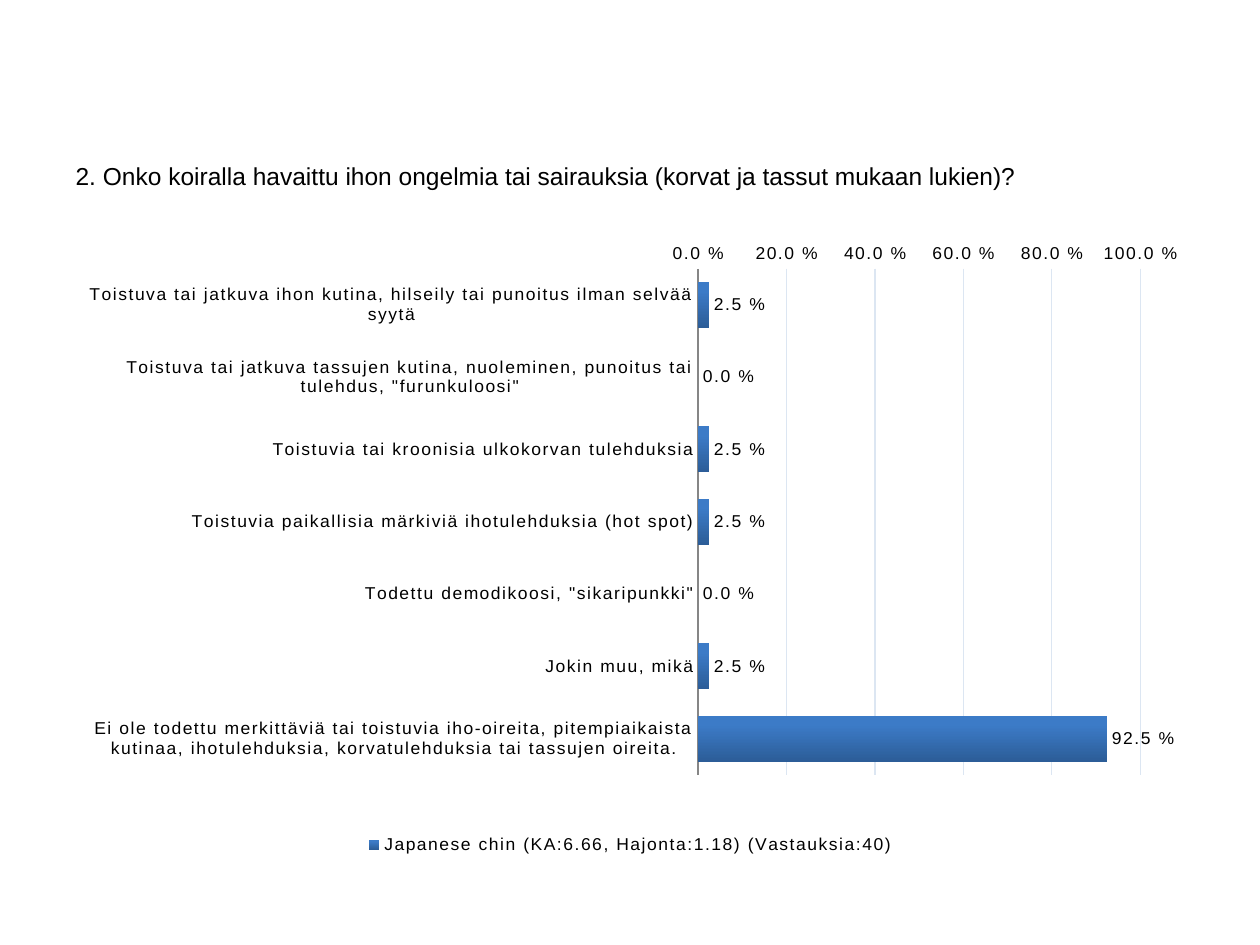
from dataclasses import dataclass

from lxml import etree
from pptx import Presentation
from pptx.chart.data import CategoryChartData
from pptx.dml.color import RGBColor
from pptx.enum.chart import (
    XL_AXIS_CROSSES,
    XL_CHART_TYPE,
    XL_LABEL_POSITION,
    XL_LEGEND_POSITION,
    XL_TICK_MARK,
)
from pptx.oxml import parse_xml
from pptx.oxml.ns import nsdecls, qn
from pptx.util import Inches, Pt

BAR_CLUSTERED = XL_CHART_TYPE.BAR_CLUSTERED
LEGEND_BOTTOM = XL_LEGEND_POSITION.BOTTOM
OUTSIDE_END = XL_LABEL_POSITION.OUTSIDE_END
NO_TICK = XL_TICK_MARK.NONE
CROSS_MAXIMUM = XL_AXIS_CROSSES.MAXIMUM


@dataclass(frozen=True)
class Theme:
    font: str = "Arial"
    question_size: Pt = Pt(14)
    chart_size: Pt = Pt(10)
    letter_spacing: int = 100  # hundredths of a point
    text: RGBColor = RGBColor(0, 0, 0)
    bar_light: RGBColor = RGBColor(0x3C, 0x7B, 0xC7)
    bar_dark: RGBColor = RGBColor(0x2C, 0x5D, 0x98)
    grid: RGBColor = RGBColor(0xDC, 0xE6, 0xF2)
    axis: RGBColor = RGBColor(0x86, 0x86, 0x86)


@dataclass(frozen=True)
class Answer:
    label: str
    share: float


THEME = Theme()
PERCENT = r"0.0\ %"
QUESTION = "2. Onko koiralla havaittu ihon ongelmia tai sairauksia (korvat ja tassut mukaan lukien)?"
SERIES_NAME = "Japanese chin (KA:6.66, Hajonta:1.18) (Vastauksia:40)"
ANSWERS = [
    Answer("Toistuva tai jatkuva ihon kutina, hilseily tai punoitus ilman selvää syytä", 0.025),
    Answer('Toistuva tai jatkuva tassujen kutina, nuoleminen, punoitus tai tulehdus, "furunkuloosi"', 0),
    Answer("Toistuvia tai kroonisia ulkokorvan tulehduksia", 0.025),
    Answer("Toistuvia paikallisia märkiviä ihotulehduksia (hot spot)", 0.025),
    Answer('Todettu demodikoosi, "sikaripunkki"', 0),
    Answer("Jokin muu, mikä", 0.025),
    Answer(
        "Ei ole todettu merkittäviä tai toistuvia iho-oireita, pitempiaikaista kutinaa, "
        "ihotulehduksia, korvatulehduksia tai tassujen oireita.",
        0.925,
    ),
]


def style_font(font, size: Pt) -> None:
    font.name = THEME.font
    font.size = size
    font.bold = False
    font.color.rgb = THEME.text


def add_question(slide) -> None:
    body = slide.placeholders[1]
    body.left, body.top = Inches(0.5), Inches(1.23)
    body.width, body.height = Inches(9), Inches(0.59)
    body.text_frame.text = QUESTION
    paragraph = body.text_frame.paragraphs[0]
    style_font(paragraph.runs[0].font, THEME.question_size)
    # Plain paragraph: no bullet and no hanging indent
    properties = paragraph._p.get_or_add_pPr()
    properties.set("marL", "0")
    properties.set("indent", "0")
    etree.SubElement(properties, qn("a:buNone"))


def style_axes(chart) -> None:
    categories, values = chart.category_axis, chart.value_axis
    for axis in (categories, values):
        axis.major_tick_mark = axis.minor_tick_mark = NO_TICK
        style_font(axis.tick_labels.font, THEME.chart_size)
    # First answer on top, percent scale still at the bottom
    categories.reverse_order = True
    categories.crosses = CROSS_MAXIMUM
    categories.format.line.color.rgb = THEME.axis
    categories.format.line.width = Pt(0.75)

    values.minimum_scale, values.maximum_scale, values.major_unit = 0, 1, 0.2
    values.tick_labels.number_format = PERCENT
    values.tick_labels.number_format_is_linked = False
    values.format.line.fill.background()
    grid_line = values.major_gridlines.format.line
    grid_line.color.rgb = THEME.grid
    grid_line.width = Pt(0.75)


def style_bars(plot) -> None:
    plot.gap_width = 58
    plot.vary_by_categories = False
    fill = plot.series[0].format.fill
    fill.gradient()
    fill.gradient_angle = 270
    stops = ((0.2, THEME.bar_light), (1, THEME.bar_dark))
    for stop, (position, color) in zip(fill.gradient_stops, stops):
        stop.position = position
        stop.color.rgb = color

    plot.has_data_labels = True
    labels = plot.data_labels
    labels.show_value = True
    labels.number_format = PERCENT
    labels.number_format_is_linked = False
    labels.position = OUTSIDE_END
    style_font(labels.font, THEME.chart_size)


def place_plot_area(chart, x: float, y: float, width: float, height: float) -> None:
    """Fix the inner plot area, in fractions of the chart."""
    plot_area = chart._chartSpace.find(".//" + qn("c:plotArea"))
    for old_layout in plot_area.findall(qn("c:layout")):
        plot_area.remove(old_layout)
    settings = {"layoutTarget": "inner", "xMode": "edge", "yMode": "edge",
                "x": x, "y": y, "w": width, "h": height}
    items = "".join(f'<c:{name} val="{value}"/>' for name, value in settings.items())
    plot_area.insert(0, parse_xml(
        f'<c:layout {nsdecls("c")}><c:manualLayout>{items}</c:manualLayout></c:layout>'))


def add_answer_chart(slide) -> None:
    data = CategoryChartData(number_format=PERCENT)
    data.categories = [answer.label for answer in ANSWERS]
    data.add_series(SERIES_NAME, [answer.share for answer in ANSWERS])
    chart = slide.shapes.add_chart(
        BAR_CLUSTERED, Inches(0.5), Inches(1.94), Inches(9), Inches(4.88), data).chart
    chart.has_title = False
    style_font(chart.font, THEME.chart_size)
    style_axes(chart)
    style_bars(chart.plots[0])
    chart.has_legend = True
    chart.legend.position = LEGEND_BOTTOM
    chart.legend.include_in_layout = False
    style_font(chart.legend.font, THEME.chart_size)
    place_plot_area(chart, 0.56, 0.02, 0.39, 0.84)
    # Widen the letter spacing of all chart text
    for run_defaults in chart._chartSpace.iter(qn("a:defRPr")):
        run_defaults.set("spc", str(THEME.letter_spacing))


def main() -> None:
    presentation = Presentation()
    presentation.slide_width, presentation.slide_height = Inches(10), Inches(7.5)
    slide = presentation.slides.add_slide(presentation.slide_layouts[1])
    # The question sits in the body, so the title goes
    title = slide.shapes.title._element
    title.getparent().remove(title)
    add_question(slide)
    add_answer_chart(slide)
    presentation.save("out.pptx")


if __name__ == "__main__":
    main()
